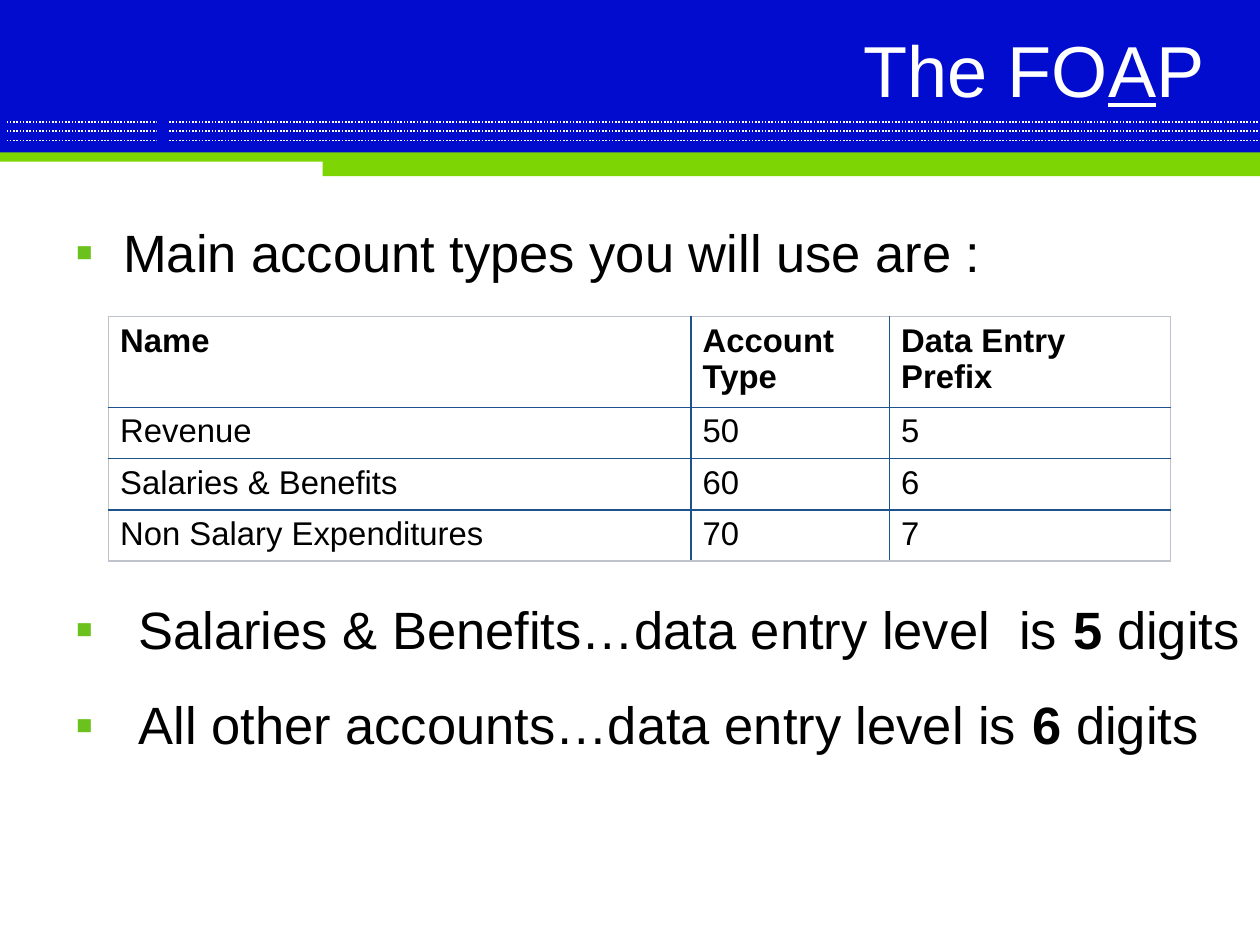
from typing import NamedTuple

from lxml import etree
from pptx import Presentation
from pptx import util as u
from pptx.dml.color import RGBColor
from pptx.enum import dml, shapes, text
from pptx.oxml.ns import qn

BLUE = RGBColor(0x02, 0x0C, 0xCE)
LIME = RGBColor(0x7D, 0xD5, 0x03)
LEAF = RGBColor(0x6B, 0xC2, 0x1C)
NAVY = RGBColor(0x1D, 0x52, 0x8D)
GREY = RGBColor(0xBF, 0xC4, 0xCC)
WHITE = RGBColor(0xFF, 0xFF, 0xFF)
BLACK = RGBColor(0x00, 0x00, 0x00)
FONT = "Arial"
WIDE, HIGH = 27.1, 20.32


class Bar(NamedTuple):
    left: float
    top: float
    width: float
    height: float
    color: RGBColor


class Bit(NamedTuple):
    text: str
    bold: bool = False
    under: bool = False


class Item(NamedTuple):
    bits: list[Bit]
    indent: float
    hang: float


BAND = Bar(0, 0, WIDE, 3.38, BLUE)
RULES = [2.62, 2.82, 3.02]
BARS = [
    Bar(0, 3.28, WIDE, 0.2, LIME),
    Bar(6.94, 3.35, WIDE - 6.94, 0.44, LIME),
    Bar(0, 0, WIDE, 0.2, BLUE),
    *[Bar(left, 0, 0.13, 3.15, BLUE) for left in (0, 3.37, 3.48)],
]
TITLE = [Bit("The FO"), Bit("A", under=True), Bit("P")]
INTRO = [Item([Bit("Main account types you will use are :")], 1.02, 1.02)]
NOTES = [
    Item([Bit(lead), Bit(count, bold=True), Bit(" digits")], 1.35, 1.42)
    for lead, count in [
        ("Salaries & Benefits…data entry level  is ", "5"),
        ("All other accounts…data entry level is ", "6"),
    ]
]
ROWS = [
    ("Name", "Account Type", "Data Entry Prefix"),
    ("Revenue", "50", "5"),
    ("Salaries & Benefits", "60", "6"),
    ("Non Salary Expenditures", "70", "7"),
]
COLS = [12.53, 4.27, 6.05]
HEAD, ROW = 1.83, 1.04


def add_bar(slide, bar: Bar) -> None:
    shape = slide.shapes.add_shape(
        shapes.MSO_SHAPE.RECTANGLE, *map(u.Cm, bar[:4]))
    shape.shadow.inherit = False
    shape.fill.solid()
    shape.fill.fore_color.rgb = bar.color
    shape.line.fill.background()


def add_rule(slide, top: float) -> None:
    rule = slide.shapes.add_connector(
        shapes.MSO_CONNECTOR.STRAIGHT, 0, u.Cm(top), u.Cm(WIDE), u.Cm(top))
    rule.line.color.rgb = WHITE
    rule.line.width = u.Pt(1)
    rule.line.dash_style = dml.MSO_LINE.ROUND_DOT
    etree.SubElement(rule._element.spPr, qn("a:effectLst"))


def style(font, size: float, color: RGBColor, bold: bool = False) -> None:
    font.name, font.size, font.bold = FONT, u.Pt(size), bold
    font.color.rgb = color


def add_bits(para, bits: list[Bit], size: float, color: RGBColor) -> None:
    for bit in bits:
        run = para.add_run()
        run.text = bit.text
        style(run.font, size, color, bit.bold)
        run.font.underline = bit.under


def pad(frame) -> None:
    frame.margin_left = frame.margin_right = u.Cm(0.28)
    frame.margin_top = frame.margin_bottom = u.Cm(0.13)


def set_title(slide) -> None:
    title = slide.shapes.title
    title.left, title.top = u.Cm(7.44), u.Cm(0.69)
    title.width, title.height = u.Cm(18.75), u.Cm(1.57)
    frame = title.text_frame
    pad(frame)
    frame.auto_size = text.MSO_AUTO_SIZE.NONE
    frame.vertical_anchor = text.MSO_ANCHOR.MIDDLE
    para = frame.paragraphs[0]
    para.alignment = text.PP_ALIGN.RIGHT
    add_bits(para, TITLE, 44, WHITE)
    slide.shapes._spTree.append(title._element)  # in front of the band


def add_bullet(para, item: Item) -> None:
    props = para._p.get_or_add_pPr()
    props.set("marL", str(u.Cm(item.indent)))
    props.set("indent", str(-u.Cm(item.hang)))
    color = etree.SubElement(props, qn("a:buClr"))
    etree.SubElement(color, qn("a:srgbClr"), val=str(LEAF))
    etree.SubElement(props, qn("a:buFont"), typeface=FONT)
    etree.SubElement(props, qn("a:buChar"), char="▪")


def add_list(slide, top: float, height: float, items: list[Item]) -> None:
    box = slide.shapes.add_textbox(
        u.Cm(1.35), u.Cm(top), u.Cm(WIDE - 1.35), u.Cm(height))
    frame = box.text_frame
    frame.word_wrap = True
    pad(frame)
    for i, item in enumerate(items):
        para = frame.add_paragraph() if i else frame.paragraphs[0]
        if i:
            para.space_before = u.Pt(20)
        add_bullet(para, item)
        add_bits(para, item.bits, 32, BLACK)


def add_edge(cell, side: str, color: RGBColor) -> None:
    props = cell._tc.get_or_add_tcPr()
    edge = etree.SubElement(props, qn(f"a:{side}"), w=str(u.Pt(1)))
    fill = etree.SubElement(edge, qn("a:solidFill"))
    etree.SubElement(fill, qn("a:srgbClr"), val=str(color))


def add_grid(slide) -> None:
    last, end = len(ROWS) - 1, len(COLS) - 1
    table = slide.shapes.add_table(
        len(ROWS), len(COLS), u.Cm(2.33), u.Cm(6.81),
        u.Cm(sum(COLS)), u.Cm(HEAD + ROW * last)).table
    table.first_row = table.horz_banding = False
    for col, width in zip(table.columns, COLS):
        col.width = u.Cm(width)
    for r, row in enumerate(ROWS):
        table.rows[r].height = u.Cm(ROW if r else HEAD)
        for c, word in enumerate(row):
            cell = table.cell(r, c)
            outer = {"lnL": c == 0, "lnR": c == end,
                     "lnT": r == 0, "lnB": r == last}
            for side, is_outer in outer.items():
                add_edge(cell, side, GREY if is_outer else NAVY)
            cell.fill.background()
            cell.text_frame.text = word
            run = cell.text_frame.paragraphs[0].runs[0]
            style(run.font, 20, BLACK, bold=r == 0)


def main() -> None:
    deck = Presentation()
    deck.slide_width, deck.slide_height = u.Cm(WIDE), u.Cm(HIGH)
    slide = deck.slides.add_slide(deck.slide_layouts[5])
    add_bar(slide, BAND)
    for top in RULES:
        add_rule(slide, top)
    for bar in BARS:
        add_bar(slide, bar)
    set_title(slide)
    add_list(slide, 4.6, 1.6, INTRO)
    add_list(slide, 12.7, 3.6, NOTES)
    add_grid(slide)
    deck.save("out.pptx")


if __name__ == "__main__":
    main()
